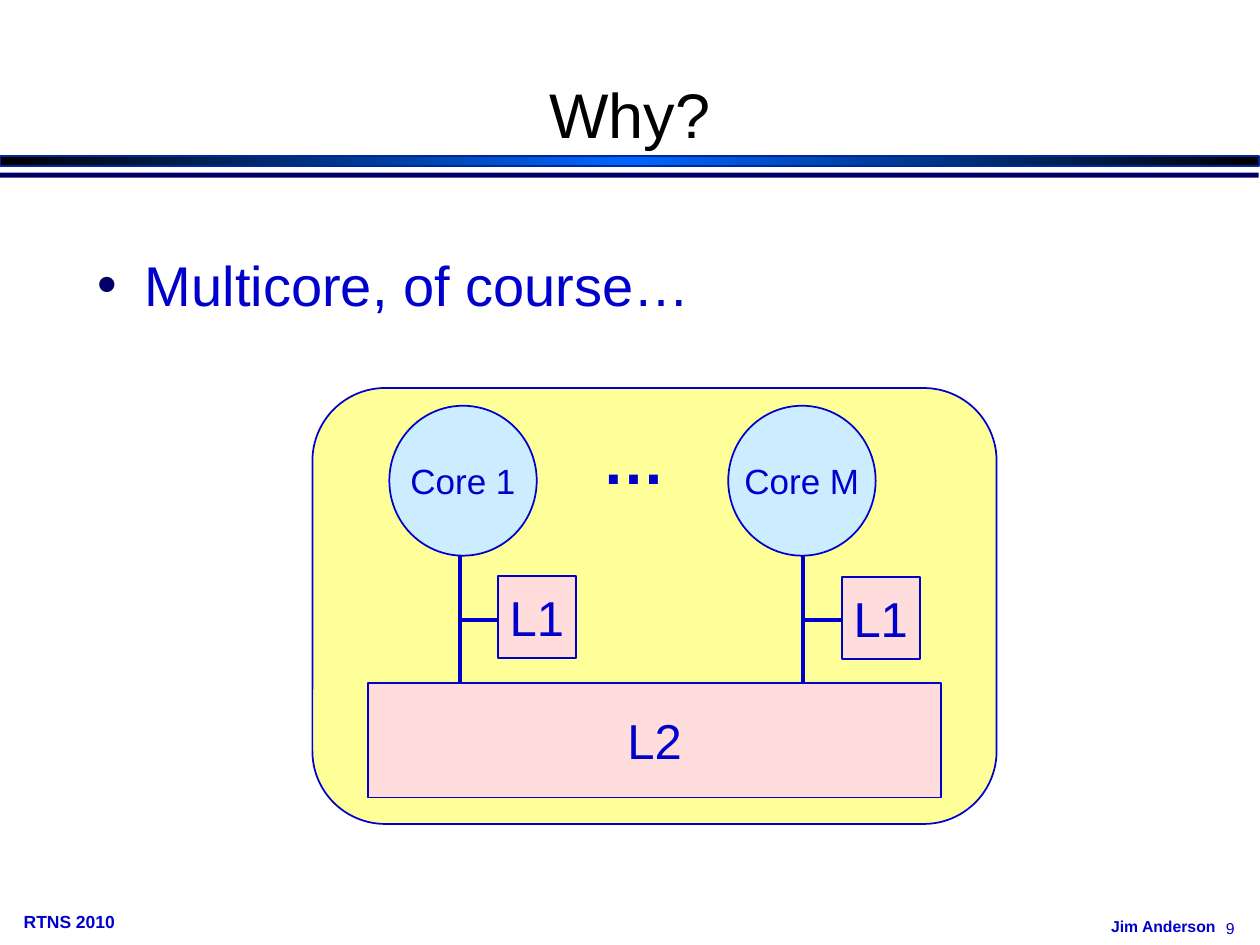
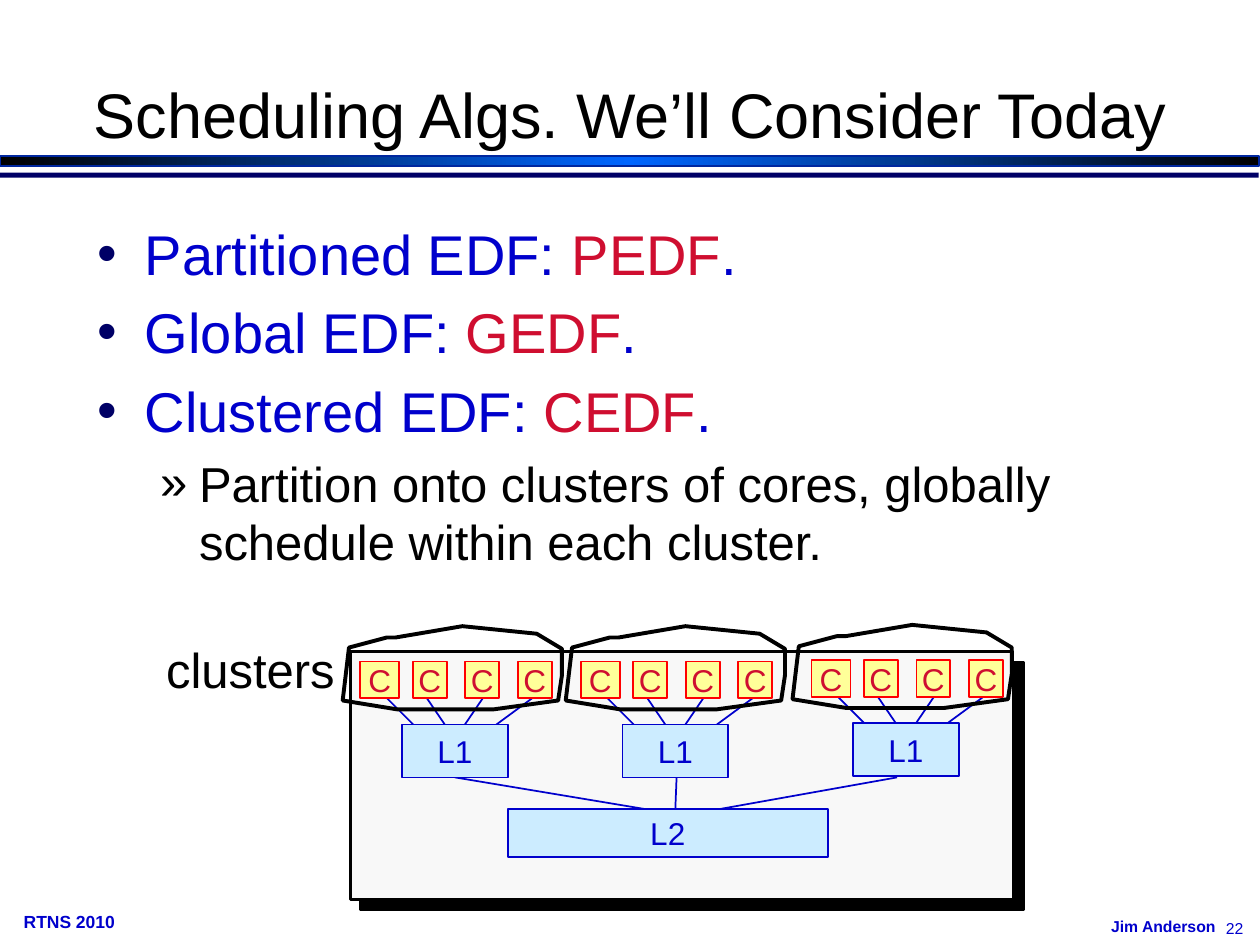
from copy import deepcopy

from lxml import etree
from pptx import Presentation
from pptx import util as u
from pptx.dml import color
from pptx.enum import shapes, text
from pptx.oxml import ns

FONT = "Arial"
BLUE = "0000CC"
NAVY = "000066"
RED = "CF0E30"
BLACK = "000000"
SKY = "CCECFF"
PINK = "FFDDDD"
YELLOW = "FFFF99"
KINDS = shapes.MSO_SHAPE

BULLETS = [
    {"mark": "•", "colour": NAVY, "indent": 0.38, "hang": 0.38, "size": 32},
    {"mark": "»", "colour": BLACK, "indent": 0.81, "hang": 0.31, "size": 28},
]
CLUSTER_OUTLINE = [
    (0.42, 0.09), (0.35, 0.09), (0.05, 0.17), (0, 0.59), (0.43, 0.66), (1.2, 0.66),
    (1.71, 0.59), (1.74, 0.39), (1.74, 0.18), (1.54, 0.06), (0.95, 0),
]
CORE_WIRES = [(0.17, 0.42), (0.5, 0.67), (1, 0.83), (1.42, 1.08)]


def rgb(value):
    return color.RGBColor.from_string(value)


def inches(values):
    return [u.Inches(value) for value in values]


def add_xml(parent, tag, **attributes):
    return etree.SubElement(parent, ns.qn(tag), attributes)


def set_font(font, size, colour, bold=False):
    font.name = FONT
    font.size = u.Pt(size)
    font.bold = bold
    font.color.rgb = rgb(colour)


def place(shape, box):
    shape.left, shape.top, shape.width, shape.height = inches(box)


def add_line(slide, start, end, width=1):
    line = slide.shapes.add_connector(
        shapes.MSO_CONNECTOR.STRAIGHT, *inches(start), *inches(end))
    line.line.color.rgb = rgb(BLUE)
    line.line.width = u.Pt(width)
    add_xml(line._element.spPr, "a:effectLst")


def add_box(slide, box, fill, line=BLUE, width=1, kind=KINDS.RECTANGLE):
    shape = slide.shapes.add_shape(kind, *inches(box))
    shape.shadow.inherit = False
    shape.fill.solid()
    shape.fill.fore_color.rgb = rgb(fill)
    if line:
        shape.line.color.rgb = rgb(line)
        shape.line.width = u.Pt(width)
    else:
        shape.line.fill.background()
    return shape


def add_node(slide, label, box, fill, size, colour=BLUE, **style):
    shape = add_box(slide, box, fill, **style)
    frame = shape.text_frame
    frame.word_wrap = False
    frame.vertical_anchor = text.MSO_ANCHOR.MIDDLE
    paragraph = frame.paragraphs[0]
    paragraph.text = label
    paragraph.alignment = text.PP_ALIGN.CENTER
    set_font(paragraph.font, size, colour)


def add_label(slide, label, box, size, colour=BLUE, bold=False, wrap=False):
    frame = slide.shapes.add_textbox(*inches(box)).text_frame
    frame.word_wrap = wrap
    paragraph = frame.paragraphs[0]
    paragraph.text = label
    set_font(paragraph.font, size, colour, bold)


def add_gradient_band(slide):
    band = add_box(slide, (0, 1.24, 9.99, 0.08), BLACK, "00279F")
    band.fill.gradient()
    band.fill.gradient_angle = 0
    stop_list = band._element.spPr.find(".//" + ns.qn("a:gsLst"))
    stop_list.append(deepcopy(stop_list[0]))
    stops = zip(band.fill.gradient_stops, (0, 0.5, 1), (BLACK, "0066FF", BLACK))
    for stop, position, colour in stops:
        stop.position = position
        stop.color.rgb = rgb(colour)


def add_slide(presentation, title, number):
    slide = presentation.slides.add_slide(presentation.slide_layouts[1])
    place(slide.shapes.title, (0, 0, 10, 1.25))
    frame = slide.shapes.title.text_frame
    frame.auto_size = text.MSO_AUTO_SIZE.NONE
    frame.vertical_anchor = text.MSO_ANCHOR.BOTTOM
    paragraph = frame.paragraphs[0]
    paragraph.text = title
    paragraph.alignment = text.PP_ALIGN.CENTER
    set_font(paragraph.font, 36, BLACK)
    add_gradient_band(slide)
    add_box(slide, (0, 1.37, 9.99, 0.04), NAVY, None)
    add_label(slide, "Jim Anderson", (8.72, 7.23, 1.04, 0.25), 9, bold=True, wrap=True)
    add_label(slide, number, (9.63, 7.24, 0.35, 0.25), 9)
    add_label(slide, "RTNS 2010", (0.09, 7.18, 0.93, 0.27), 10, bold=True)
    return slide


def set_bullet(paragraph, bullet):
    properties = paragraph._p.get_or_add_pPr()
    properties.set("marL", str(u.Inches(bullet["indent"])))
    properties.set("indent", str(-u.Inches(bullet["hang"])))
    add_xml(add_xml(properties, "a:buClr"), "a:srgbClr", val=bullet["colour"])
    add_xml(properties, "a:buFont", typeface=FONT)
    add_xml(properties, "a:buChar", char=bullet["mark"])


def fill_body(slide, box, items):
    body = slide.placeholders[1]
    place(body, box)
    frame = body.text_frame
    frame.auto_size = text.MSO_AUTO_SIZE.NONE
    for index, (level, parts) in enumerate(items):
        paragraph = frame.add_paragraph() if index else frame.paragraphs[0]
        paragraph.level = level
        set_bullet(paragraph, BULLETS[level])
        paragraph.font.name = FONT
        paragraph.font.size = u.Pt(BULLETS[level]["size"])
        for words, colour in parts:
            run = paragraph.add_run()
            run.text = words
            run.font.color.rgb = rgb(colour)


def add_core(slide, name, circle_left, wire_x, cache_left, cache_top):
    add_node(slide, name, (circle_left, 3.22, 1.17, 1.19), SKY, 20, kind=KINDS.OVAL)
    add_node(slide, "L1", (cache_left, cache_top, 0.62, 0.65), PINK, 28)
    add_line(slide, (wire_x, 4.41), (wire_x, 5.42), 2.25)
    add_line(slide, (wire_x, 4.92), (cache_left, 4.92), 2.25)


def build_multicore_slide(presentation):
    slide = add_slide(presentation, "Why?", "9")
    fill_body(slide, (0.67, 1.94, 8.58, 4.5), [(0, [("Multicore, of course…", BLUE)])])
    chip = add_box(slide, (2.48, 3.08, 5.43, 3.46), YELLOW, kind=KINDS.ROUNDED_RECTANGLE)
    chip.adjustments[0] = 0.167
    add_node(slide, "L2", (2.92, 5.42, 4.55, 0.91), PINK, 28)
    add_core(slide, "Core 1", 3.09, 3.65, 3.95, 4.57)
    add_core(slide, "Core M", 5.78, 6.37, 6.68, 4.58)
    add_label(slide, "…", (4.68, 3.3, 0.7, 0.7), 36, bold=True)


def add_panel(slide):
    panel = add_box(slide, (2.78, 5.17, 5.26, 1.97), "F8F8F8", BLACK, 1.5)
    effects = panel._element.spPr.find(ns.qn("a:effectLst"))
    shadow = add_xml(effects, "a:outerShdw", dist=str(u.Pt(8.5)), dir=str(45 * 60000),
                     algn="ctr", rotWithShape="0")
    add_xml(shadow, "a:srgbClr", val=BLACK)


def add_cluster(slide, left, top, outline_left):
    for core_x, cache_x in CORE_WIRES:
        add_line(slide, (left + core_x, top + 0.25), (left + cache_x, top + 0.5))
    add_node(slide, "L1", (left + 0.33, top + 0.5, 0.84, 0.42), SKY, 18)
    for index in range(4):
        width = 0.27 if index else 0.31
        box = (left + index * 1.25 / 3, top, width, 0.29)
        add_node(slide, "C", box, YELLOW, 18, RED, line="FF0000")
    points = [inches((outline_left + x, top - 0.28 + y)) for x, y in CLUSTER_OUTLINE]
    builder = slide.shapes.build_freeform(*points[0])
    builder.add_line_segments(points[1:], close=True)
    outline = builder.convert_to_shape()
    outline.shadow.inherit = False
    outline.fill.background()
    outline.line.color.rgb = rgb(BLACK)
    outline.line.width = u.Pt(2.25)


def build_scheduling_slide(presentation):
    slide = add_slide(presentation, "Scheduling Algs. We’ll Consider Today", "22")
    algorithms = [("Partitioned", "PEDF"), ("Global", "GEDF"), ("Clustered", "CEDF")]
    items = [(0, [(f"{kind} EDF: ", BLUE), (short, RED), (".", BLUE)])
             for kind, short in algorithms]
    items.append((1, [("Partition onto clusters of cores, globally schedule "
                       "within each cluster.", BLACK)]))
    fill_body(slide, (0.67, 1.69, 8.58, 4.11), items)
    add_panel(slide)
    for cache_x, shared_x in [(3.61, 5.11), (5.37, 5.36), (7.12, 5.72)]:
        add_line(slide, (cache_x, 6.17), (shared_x, 6.42))
    add_node(slide, "L2", (4.03, 6.42, 2.54, 0.38), SKY, 18)
    for cluster in [(2.86, 5.25, 2.72), (4.61, 5.25, 4.49), (6.44, 5.24, 6.29)]:
        add_cluster(slide, *cluster)
    add_label(slide, "clusters", (1.22, 5.03, 1.54, 0.57), 28, BLACK)


def main():
    presentation = Presentation()
    presentation.slide_width = u.Inches(10)
    presentation.slide_height = u.Inches(7.5)
    build_multicore_slide(presentation)
    build_scheduling_slide(presentation)
    presentation.save("out.pptx")


if __name__ == "__main__":
    main()
